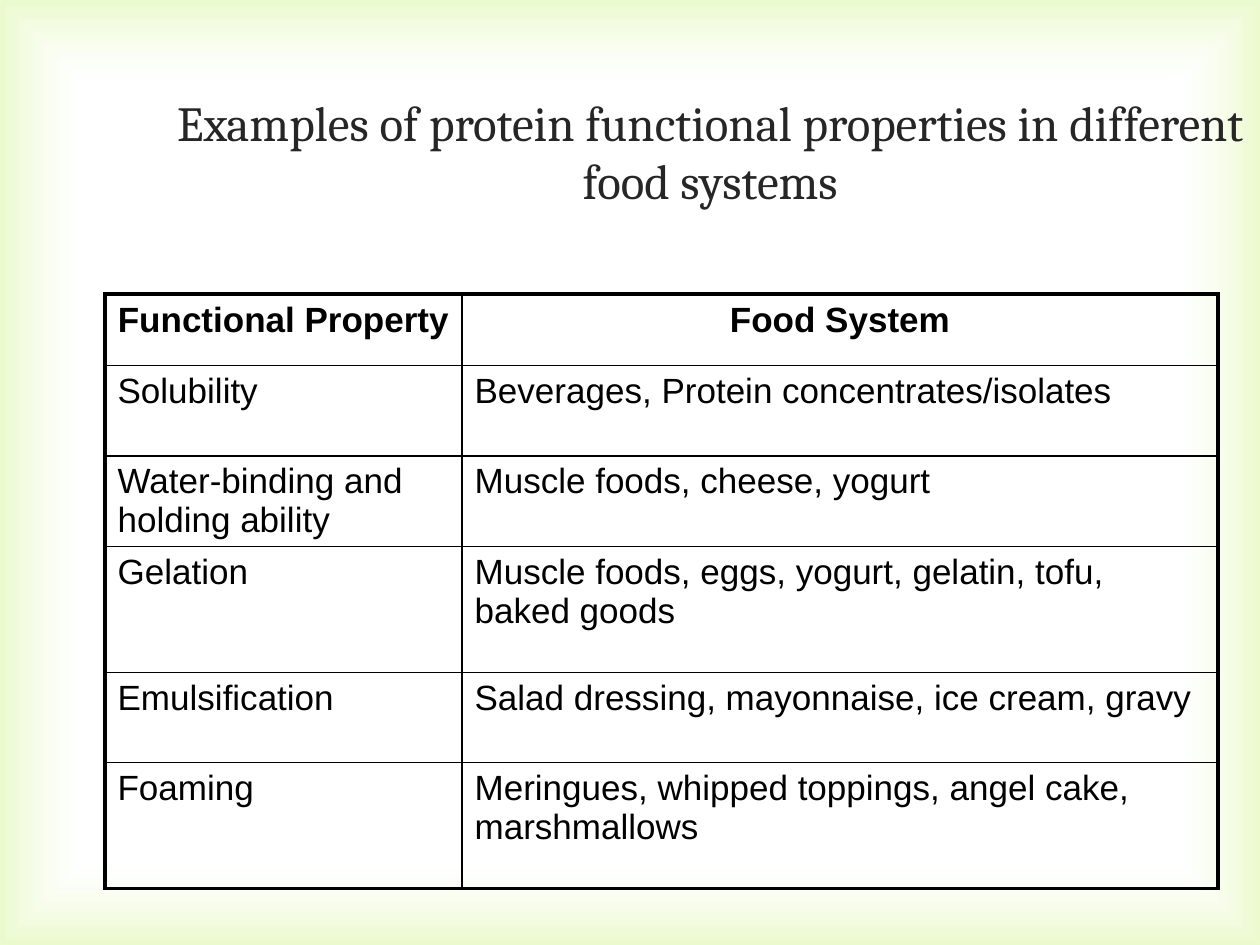
from lxml import etree
from pptx import Presentation, util as u
from pptx.dml.color import RGBColor
from pptx.enum import shapes, text
from pptx.oxml import parse_xml
from pptx.oxml.ns import qn

Pt = u.Pt
NAMESPACE = "http://schemas.openxmlformats.org/drawingml/2006/main"

TITLE = "Examples of protein functional properties in different food systems"
ROWS = [
    ("Functional Property", "Food System"),
    ("Solubility", "Beverages, Protein concentrates/isolates"),
    ("Water-binding and holding ability", "Muscle foods, cheese, yogurt"),
    ("Gelation", "Muscle foods, eggs, yogurt, gelatin, tofu, baked goods"),
    ("Emulsification", "Salad dressing, mayonnaise, ice cream, gravy"),
    ("Foaming", "Meringues, whipped toppings, angel cake, marshmallows"),
]
COLUMN_WIDTHS = [204, 432]
ROW_HEIGHTS = [41, 51.5, 51.5, 72, 51.5, 72]


def color(value):
    return RGBColor.from_string(value)


class SlideBuilder:
    title_format = {"name": "Cambria", "size": Pt(28), "bold": False}
    cell_format = {"name": "Arial", "size": Pt(20)}
    title_color = "262626"
    ink = "000000"
    outer_line, inner_line = 2.25, 1
    # position %, colour, opacity %
    glow_stops = [(83, "FFFFFF", 11), (100, "AAEA25", 23)]

    def __init__(self, presentation):
        self.slide = presentation.slides.add_slide(presentation.slide_layouts[5])

    def format_font(self, font, values, hex_color):
        for name, value in values.items():
            setattr(font, name, value)
        font.color.rgb = color(hex_color)

    def glow(self, width, height):
        """Cover the slide with a tint that fades in towards its edges."""
        shape = self.slide.shapes.add_shape(
            shapes.MSO_SHAPE.RECTANGLE, 0, 0, width, height)
        shape.shadow.inherit = False
        shape.line.fill.background()
        stops = "".join(
            f'<a:gs pos="{position * 1000}"><a:srgbClr val="{value}">'
            f'<a:alpha val="{opacity * 1000}"/></a:srgbClr></a:gs>'
            for position, value, opacity in self.glow_stops)
        gradient = parse_xml(
            f'<a:gradFill xmlns:a="{NAMESPACE}"><a:gsLst>{stops}</a:gsLst>'
            '<a:path path="rect"><a:fillToRect l="50000" t="50000" '
            'r="50000" b="50000"/></a:path></a:gradFill>')
        shape.element.spPr.find(qn("a:prstGeom")).addnext(gradient)
        # Behind the title
        self.slide.shapes.title.element.addprevious(shape.element)

    def title(self, words, left, top, width, height):
        shape = self.slide.shapes.title
        shape.left, shape.top, shape.width, shape.height = map(
            Pt, (left, top, width, height))
        frame = shape.text_frame
        frame.text = words
        frame.word_wrap = True
        frame.auto_size = text.MSO_AUTO_SIZE.NONE
        frame.vertical_anchor = text.MSO_ANCHOR.TOP
        paragraph = frame.paragraphs[0]
        paragraph.alignment = text.PP_ALIGN.CENTER
        self.format_font(paragraph.runs[0].font, self.title_format, self.title_color)

    def border(self, cell, side, width):
        properties = cell._tc.get_or_add_tcPr()
        line = etree.SubElement(properties, qn(f"a:ln{side}"), w=str(Pt(width)))
        fill = etree.SubElement(line, qn("a:solidFill"))
        etree.SubElement(fill, qn("a:srgbClr"), val=self.ink)

    def table(self, rows, left, top, widths, heights):
        table = self.slide.shapes.add_table(
            len(rows), len(widths), Pt(left), Pt(top),
            Pt(sum(widths)), Pt(sum(heights))).table
        table.horz_banding = False
        for column, width in zip(table.columns, widths):
            column.width = Pt(width)
        for row, height in zip(table.rows, heights):
            row.height = Pt(height)
        for i, row in enumerate(rows):
            for j, words in enumerate(row):
                cell = table.cell(i, j)
                cell.text = words
                paragraph = cell.text_frame.paragraphs[0]
                header = i == 0
                paragraph.alignment = (
                    text.PP_ALIGN.CENTER if header else text.PP_ALIGN.LEFT)
                self.format_font(paragraph.runs[0].font,
                                 {**self.cell_format, "bold": header}, self.ink)
                on_edge = {"L": j == 0, "R": j == len(widths) - 1,
                           "T": header, "B": i == len(rows) - 1}
                for side, outer in on_edge.items():
                    self.border(cell, side,
                                self.outer_line if outer else self.inner_line)
                cell.fill.background()


def main():
    presentation = Presentation()
    presentation.slide_width, presentation.slide_height = Pt(720), Pt(540)
    builder = SlideBuilder(presentation)
    builder.glow(presentation.slide_width, presentation.slide_height)
    builder.title(TITLE, 91.5, 49, 628.5, 83)
    builder.table(ROWS, 60, 168, COLUMN_WIDTHS, ROW_HEIGHTS)
    presentation.save("out.pptx")


if __name__ == "__main__":
    main()
